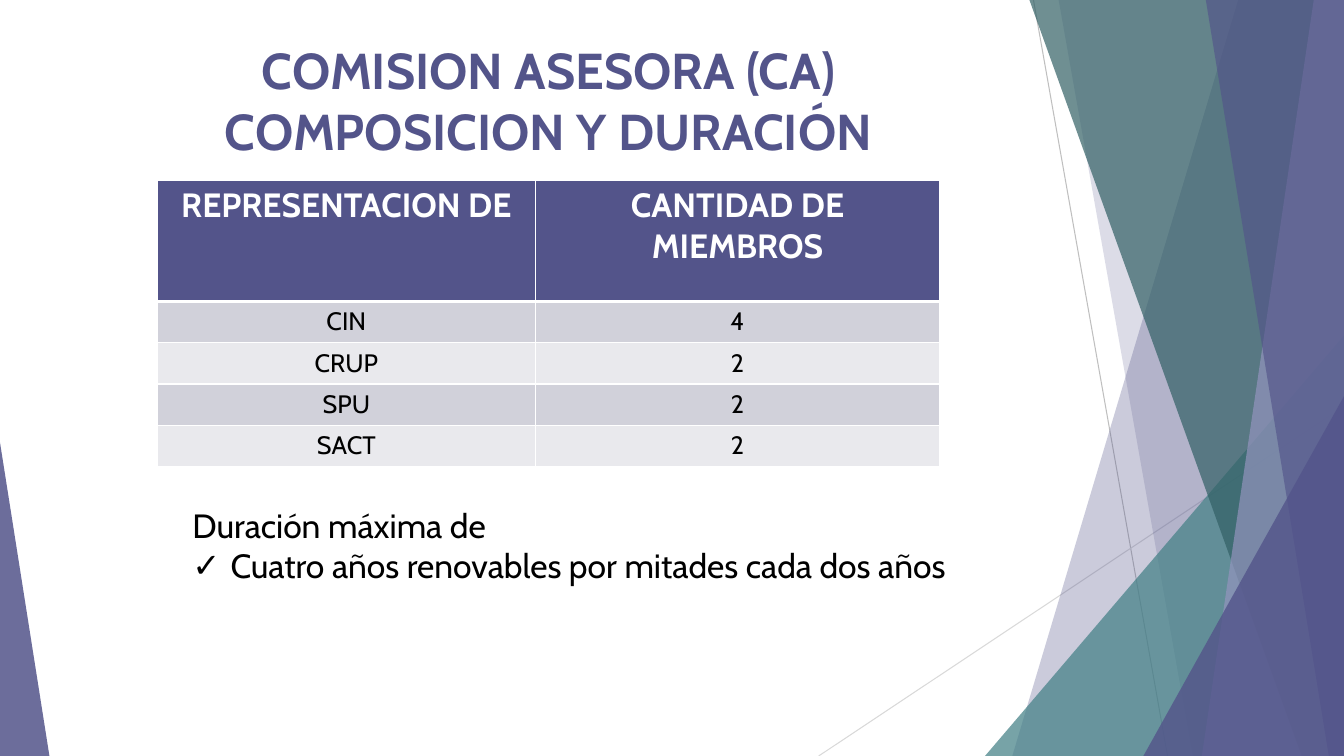
from lxml.etree import SubElement
from pptx import Presentation
from pptx.dml.color import RGBColor
from pptx.enum.shapes import MSO_CONNECTOR, MSO_SHAPE
from pptx.enum.text import MSO_ANCHOR, PP_ALIGN
from pptx.oxml.ns import qn
from pptx.util import Inches, Pt

COLORS = {
    "purple": "53548A", "lilac": "9394BE", "teal": "438086",
    "dark_teal": "326065", "gray": "BFBFBF", "light_gray": "D9D9D9",
    "band_dark": "D1D1DA", "band_light": "E9E9ED",
    "white": "FFFFFF", "black": "000000",
}
FONT = "Cabin"
WIDTH, HEIGHT = 13.33, 7.5
TITLE = {"size": Pt(36), "bold": True}
HEADER = {"size": Pt(24), "bold": True}
CELL = {"size": Pt(18), "bold": False}
BODY = {"size": Pt(24), "bold": False}
ROWS = [
    ("REPRESENTACION DE", "CANTIDAD DE MIEMBROS"),
    ("CIN", "4"), ("CRUP", "2"), ("SPU", "2"), ("SACT", "2"),
]


def rgb(name):
    return RGBColor.from_string(COLORS[name])


def inches(*values):
    return [Inches(v) for v in values]


def paint(sp, color, opacity):
    sp.shadow.inherit = False
    sp.fill.solid()
    sp.fill.fore_color.rgb = rgb(color)
    sp.line.fill.background()
    clr = sp._element.spPr.find(qn("a:solidFill"))[0]
    SubElement(clr, qn("a:alpha"), val=str(opacity * 1000))


def add_line(s, start, end, color):
    line = s.shapes.add_connector(MSO_CONNECTOR.STRAIGHT, *inches(*start, *end))
    line.line.color.rgb = rgb(color)
    line.line.width = Pt(0.75)
    SubElement(line._element.spPr, qn("a:effectLst"))


def add_band(s, top_x, bottom_x, color, opacity):
    builder = s.shapes.build_freeform(*inches(top_x, 0))
    corners = [(WIDTH, 0), (WIDTH, HEIGHT), (bottom_x, HEIGHT)]
    builder.add_line_segments([inches(*c) for c in corners], close=True)
    paint(builder.convert_to_shape(), color, opacity)


def add_triangle(s, left, top, width, apex, color, opacity):
    sp = s.shapes.add_shape(MSO_SHAPE.ISOSCELES_TRIANGLE,
                            *inches(left, top, width, HEIGHT - top))
    sp.adjustments[0] = apex
    paint(sp, color, opacity)


def write(p, text, fmt, color, align=PP_ALIGN.LEFT):
    p.text = text
    p.alignment = align
    for r in p.runs:
        r.font.name = FONT
        r.font.color.rgb = rgb(color)
        for key, value in fmt.items():
            setattr(r.font, key, value)


def add_text_frame(s, *box):
    tf = s.shapes.add_textbox(*inches(*box)).text_frame
    tf.word_wrap = True
    tf.vertical_anchor = MSO_ANCHOR.TOP
    return tf


def add_bullet(p, char, indent):
    pPr = p._p.get_or_add_pPr()
    pPr.set("marL", str(Inches(indent)))
    pPr.set("indent", str(-Inches(indent)))
    SubElement(pPr, qn("a:buFont"), typeface=FONT)
    SubElement(pPr, qn("a:buChar"), char=char)


def set_borders(cell, widths):
    tcPr = cell._tc.get_or_add_tcPr()
    for side, width in widths.items():
        ln = SubElement(tcPr, qn("a:" + side), w=str(Pt(width)))
        fill = SubElement(ln, qn("a:solidFill"))
        SubElement(fill, qn("a:srgbClr"), val=COLORS["white"])


def add_members_table(s):
    table = s.shapes.add_table(len(ROWS), 2, *inches(1.56, 1.79, 7.76, 2.82)).table
    for col, width in zip(table.columns, (3.75, 4.01)):
        col.width = Inches(width)
    for i, values in enumerate(ROWS):
        table.rows[i].height = Inches(0.41 if i else 1.2)
        band = ("band_light", "band_dark")[i % 2] if i else "purple"
        widths = {"lnL": 1, "lnR": 1, "lnT": 3 if i == 1 else 1, "lnB": 1 if i else 3}
        for j, value in enumerate(values):
            cell = table.cell(i, j)
            write(cell.text_frame.paragraphs[0], value, CELL if i else HEADER,
                  "black" if i else "white", PP_ALIGN.CENTER)
            set_borders(cell, widths)
            cell.fill.solid()
            cell.fill.fore_color.rgb = rgb(band)


def add_background(s):
    add_line(s, (10.25, 0), (11.58, HEIGHT), "gray")
    add_line(s, (WIDTH, 4.03), (8.12, HEIGHT), "light_gray")
    add_band(s, 12.28, 10.04, "purple", 30)
    add_band(s, 10.5, 11.83, "purple", 20)
    add_triangle(s, 9.77, 3.33, 3.56, 1, "teal", 72)
    add_band(s, 10.21, 12.91, "dark_teal", 70)
    add_band(s, 13.03, 11.92, "lilac", 70)
    add_band(s, 11.96, 13.18, "purple", 65)
    add_triangle(s, 11.34, 3.93, 1.99, 1, "purple", 80)
    add_triangle(s, 0, 4.39, 0.49, 0, "purple", 85)


def main():
    prs = Presentation()
    prs.slide_width, prs.slide_height = inches(WIDTH, HEIGHT)
    s = prs.slides.add_slide(prs.slide_layouts[6])
    add_background(s)
    tf = add_text_frame(s, 0.63, 0.34, 9.62, 1.44)
    write(tf.paragraphs[0], "COMISION ASESORA (CA)\vCOMPOSICION Y DURACIÓN",
          TITLE, "purple", PP_ALIGN.CENTER)
    add_members_table(s)
    tf = add_text_frame(s, 1.81, 4.96, 8.51, 1.31)
    write(tf.paragraphs[0], "Duración máxima de", BODY, "black")
    p = tf.add_paragraph()
    write(p, "Cuatro años renovables por mitades cada dos años", BODY, "black")
    add_bullet(p, "✓", 0.38)
    prs.save("out.pptx")


if __name__ == "__main__":
    main()
